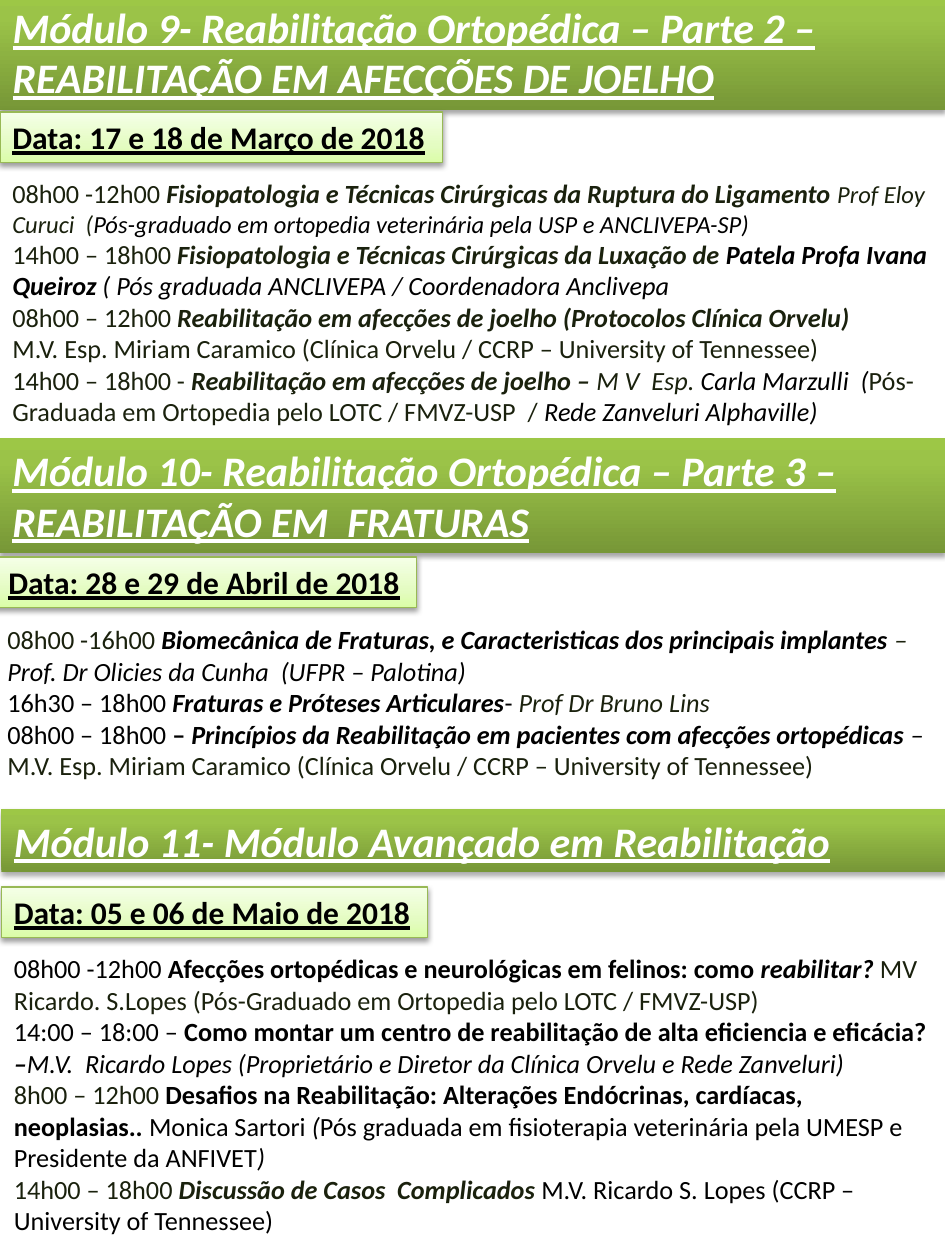
from copy import deepcopy

from lxml import etree
from pptx import Presentation
from pptx import util as u
from pptx.dml.color import RGBColor
from pptx.enum import shapes, text
from pptx.oxml.ns import qn

THEME = {
    "font": "Calibri",
    "white": "FFFFFF", "black": "000000", "dark": "1A210D", "edge": "98B955",
    "banner": [(0, "779737"), (0.8, "9BC348"), (1, "9DC746")],
    "date": [(0, "DAFDA7"), (0.35, "E4FCC2"), (1, "F5FFE7")],
    "title_size": 24, "date_size": 18, "body_size": 15, "small_size": 14,
}
WIDTH, HEIGHT = 19.05, 25.4

# Content: run styles are b bold, i italic, u underline, g dark green, s small
SPEAKER = [("M.V. Esp. Miriam Caramico (Clínica Orvelu / CCRP – University of Tennessee)", "g")]
MODULES = [
    {
        "title": "Módulo 9- Reabilitação Ortopédica – Parte 2 – REABILITAÇÃO EM AFECÇÕES DE JOELHO",
        "date": "Data: 17 e 18 de Março de 2018",
        "banner_box": (0, -0.1, WIDTH, 2.31),
        "date_box": (0, 2.26, 8.92, 1.02),
        "body_box": (0, 3.45, WIDTH, 5.33),
        "body": [
            [("08h00 -12h00 ", "g"),
             ("Fisiopatologia e Técnicas Cirúrgicas da Ruptura do Ligamento ", "big"),
             ("Prof Eloy Curuci  (", "igs"),
             ("Pós-graduado em ortopedia veterinária pela USP e ANCLIVEPA-SP)", "is")],
            [("14h00 – 18h00 ", "g"),
             ("Fisiopatologia e Técnicas Cirúrgicas da Luxação de ", "big"),
             ("Patela Profa Ivana Queiroz ", "bi"),
             ("( Pós graduada ANCLIVEPA / Coordenadora Anclivepa", "i")],
            [("08h00 – 12h00 ", "g"),
             ("Reabilitação em afecções de joelho (Protocolos Clínica Orvelu)", "big")],
            SPEAKER,
            [("14h00 – 18h00 - ", "g"),
             ("Reabilitação em afecções de joelho – ", "big"),
             ("M V  Esp. ", "ig"),
             ("Carla Marzulli  (", "i"),
             ("Pós-Graduada em Ortopedia pelo LOTC / FMVZ-USP  / ", "g"),
             ("Rede Zanveluri Alphaville)", "i")],
        ],
    },
    {
        "title": "Módulo 10- Reabilitação Ortopédica – Parte 3 – REABILITAÇÃO EM  FRATURAS",
        "date": "Data: 28 e 29 de Abril de 2018",
        "banner_box": (0, 8.84, WIDTH, 2.31),
        "date_box": (-0.08, 11.23, 8.48, 1.02),
        "body_box": (-0.1, 12.45, WIDTH, 3.45),
        "body": [
            [("08h00 -16h00 ", "g"),
             ("Biomecânica de Fraturas, e Caracteristicas dos principais implantes ", "bi"),
             ("–", "ig")],
            [("Prof. Dr Olicies da Cunha  (UFPR – Palotina)", "i")],
            [("16h30 – 18h00 ", ""),
             ("Fraturas e Próteses Articulares", "bi"),
             ("- ", ""),
             ("Prof Dr Bruno Lins", "ig")],
            [("08h00 – 18h00 ", ""),
             ("– ", "b"),
             ("Princípios da Reabilitação em pacientes com afecções ortopédicas ", "bi"),
             ("–", "i")],
            SPEAKER,
        ],
    },
    {
        "title": "Módulo 11- Módulo Avançado em Reabilitação",
        "date": "Data: 05 e 06 de Maio de 2018",
        "banner_box": (0.03, 16.31, WIDTH, 1.27),
        "date_box": (0.03, 17.88, 8.59, 1.02),
        "body_box": (0.03, 19.08, WIDTH, 6.02),
        "body": [
            [("08h00 -12h00 ", ""),
             ("Afecções ortopédicas e neurológicas em felinos: como ", "b"),
             ("reabilitar? ", "bi"),
             ("MV  Ricardo. S.Lopes (Pós-Graduado em Ortopedia pelo LOTC / FMVZ-USP)", "g")],
            [("14:00 – 18:00 – ", ""),
             ("Como montar um centro de reabilitação de alta eficiencia e eficácia?", "b"),
             (" –", "bi"),
             ("M.V.  Ricardo Lopes (Proprietário e Diretor da Clínica Orvelu e Rede Zanveluri)", "i")],
            [("8h00 – 12h00 ", "g"),
             ("Desafios na Reabilitação: Alterações Endócrinas, cardíacas, neoplasias.", "b"),
             (". ", "bi"),
             ("Monica Sartori ", ""),
             ("(", "i"),
             ("Pós graduada em fisioterapia veterinária pela UMESP e Presidente da ANFIVET", ""),
             (")", "i")],
            [("14h00 – 18h00 ", "g"),
             ("Discussão de Casos  Complicados ", "big"),
             ("M.V. Ricardo S. Lopes (CCRP – University of Tennessee)", "")],
        ],
    },
]


def color(name):
    return RGBColor.from_string(THEME.get(name, name))


def place(sp, box):
    sp.left, sp.top, sp.width, sp.height = map(u.Cm, box)


def write(sp, paragraphs, size, ink="black", wrap=True):
    tf = sp.text_frame
    tf.word_wrap = wrap
    tf.auto_size = text.MSO_AUTO_SIZE.SHAPE_TO_FIT_TEXT
    tf.vertical_anchor = text.MSO_ANCHOR.TOP
    for n, runs in enumerate(paragraphs):
        p = tf.add_paragraph() if n else tf.paragraphs[0]
        p.alignment = text.PP_ALIGN.LEFT
        for words, style in runs:
            r = p.add_run()
            r.text = words
            f = r.font
            f.name = THEME["font"]
            f.size = u.Pt(THEME["small_size" if "s" in style else size])
            f.bold, f.italic, f.underline = ("b" in style, "i" in style, "u" in style)
            f.color.rgb = color("dark" if "g" in style else ink)


def decorate(sp, stops, opacity, distance):
    """Vertical gradient with a soft shadow below."""
    sp.fill.gradient()
    sp.fill.gradient_angle = 90
    gradient = sp._element.spPr.find(qn("a:gradFill")).find(qn("a:gsLst"))
    gradient.append(deepcopy(gradient[0]))
    for stop, (position, name) in zip(sp.fill.gradient_stops, stops):
        stop.position = position
        stop.color.rgb = color(name)
    effects = sp._element.spPr.find(qn("a:effectLst"))
    if effects is None:
        effects = etree.SubElement(sp._element.spPr, qn("a:effectLst"))
    shadow = etree.SubElement(effects, qn("a:outerShdw"), blurRad=str(u.Pt(3.1)),
                              dist=str(u.Pt(distance)), dir="5400000", rotWithShape="0")
    black = etree.SubElement(shadow, qn("a:srgbClr"), val=THEME["black"])
    etree.SubElement(black, qn("a:alpha"), val=str(opacity * 1000))


def add_box(slide, box):
    sp = slide.shapes.add_shape(shapes.MSO_SHAPE.RECTANGLE, *map(u.Cm, box))
    sp.shadow.inherit = False
    return sp


def add_module(slide, module, banner):
    # Banner
    place(banner, module["banner_box"])
    banner.line.fill.background()
    decorate(banner, THEME["banner"], 35, 1.8)
    write(banner, [[(module["title"], "biu")]], "title_size", "white")

    # Date label
    label = add_box(slide, module["date_box"])
    label.line.color.rgb = color("edge")
    label.line.width = u.Pt(0.75)
    decorate(label, THEME["date"], 38, 1.6)
    write(label, [[(module["date"], "bu")]], "date_size", wrap=False)

    # Timetable
    body = slide.shapes.add_textbox(*map(u.Cm, module["body_box"]))
    write(body, module["body"], "body_size")


def main():
    prs = Presentation()
    prs.slide_width, prs.slide_height = u.Cm(WIDTH), u.Cm(HEIGHT)
    slide = prs.slides.add_slide(prs.slide_layouts[5])
    for n, module in enumerate(MODULES):
        banner = add_box(slide, module["banner_box"]) if n else slide.shapes.title
        add_module(slide, module, banner)
    prs.save("out.pptx")


if __name__ == "__main__":
    main()
